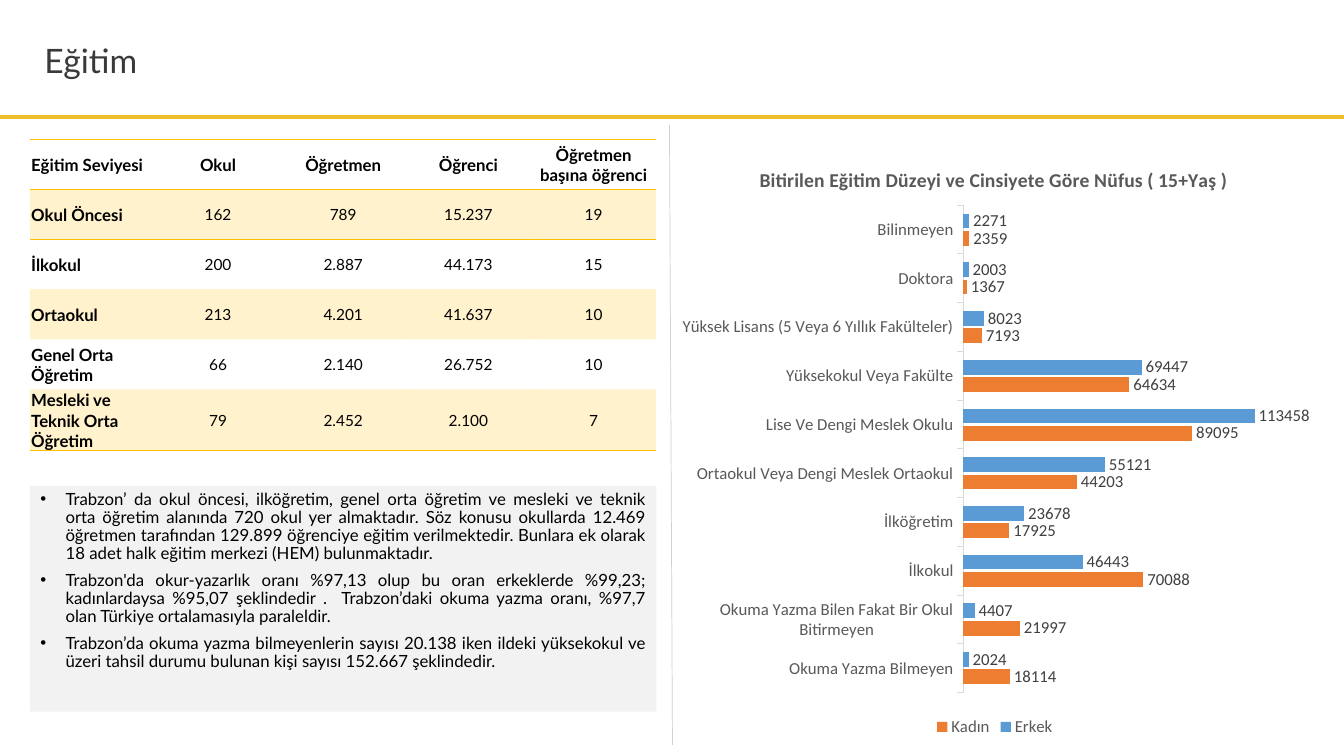
from dataclasses import dataclass

from lxml import etree
from pptx import Presentation
from pptx import util as u
from pptx.chart import data as chart_data
from pptx.dml import color
from pptx.enum import chart as ch
from pptx.enum import shapes, text
from pptx.oxml import ns, parse_xml


@dataclass(frozen=True)
class Theme:
    ink: str = "000000"
    heading: str = "3B3A39"
    gold: str = "EEBF2B"
    amber: str = "FFC000"
    divider: str = "D0CECE"
    panel: str = "F2F2F2"
    axis: str = "D9D9D9"
    muted: str = "595959"
    value: str = "404040"
    male: str = "5B9BD5"
    female: str = "ED7D31"
    text_font: str = "Lato"
    chart_font: str = "Calibri"
    title_size: int = 24
    chart_title_size: int = 14
    body_size: int = 12
    cell_size: int = 11


theme = Theme()


def style(font, face, size, hex_color, bold=False):
    font.name = face
    font.size = u.Pt(size)
    font.bold = bold
    font.color.rgb = color.RGBColor.from_string(hex_color)


def manual_layout(**parts):
    inner = '<c:layoutTarget val="inner"/>' if "w" in parts else ""
    modes = "".join(f'<c:{key}Mode val="edge"/>' for key in "xy")
    values = "".join(f'<c:{key} val="{value}"/>' for key, value in parts.items())
    return parse_xml(
        f'<c:layout {ns.nsdecls("c")}><c:manualLayout>{inner}{modes}{values}'
        "</c:manualLayout></c:layout>"
    )


deck = Presentation()
deck.slide_width = u.Inches(13.33)
deck.slide_height = u.Inches(7.5)
slide = deck.slides.add_slide(deck.slide_layouts[1])

rules = [
    (0, 1.16, 13.33, 1.16, theme.gold, 3),
    (6.64, 1.24, 6.67, 7.39, theme.divider, 0.5),
]
for x1, y1, x2, y2, hex_color, width in rules:
    rule = slide.shapes.add_connector(
        shapes.MSO_CONNECTOR.STRAIGHT, *map(u.Inches, (x1, y1, x2, y2))
    )
    rule.line.color.rgb = color.RGBColor.from_string(hex_color)
    rule.line.width = u.Pt(width)
    etree.SubElement(rule._element.spPr, ns.qn("a:effectLst"))

heading = slide.shapes.title
heading.left, heading.top, heading.width, heading.height = map(
    u.Inches, (0.34, 0.2, 12.65, 0.85)
)
heading.text_frame.vertical_anchor = text.MSO_ANCHOR.MIDDLE
heading.text_frame.auto_size = text.MSO_AUTO_SIZE.NONE
heading_line = heading.text_frame.paragraphs[0]
heading_line.alignment = text.PP_ALIGN.LEFT
heading_line.line_spacing = 0.9
heading_run = heading_line.add_run()
heading_run.text = "Eğitim"
style(heading_run.font, theme.text_font, theme.title_size, theme.heading)

findings = [
    "Trabzon’ da okul öncesi, ilköğretim, genel orta öğretim ve mesleki ve teknik orta öğretim alanında 720 okul yer almaktadır. Söz konusu okullarda 12.469 öğretmen tarafından 129.899 öğrenciye eğitim verilmektedir. Bunlara ek olarak 18 adet halk eğitim merkezi (HEM) bulunmaktadır.",
    "Trabzon'da okur-yazarlık oranı %97,13 olup bu oran erkeklerde %99,23; kadınlardaysa %95,07 şeklindedir .  Trabzon’daki okuma yazma oranı, %97,7 olan Türkiye ortalamasıyla paraleldir.",
    "Trabzon’da okuma yazma bilmeyenlerin sayısı 20.138 iken ildeki yüksekokul ve üzeri tahsil durumu bulunan kişi sayısı 152.667 şeklindedir.",
]
summary = slide.placeholders[1]
summary.left, summary.top, summary.width, summary.height = map(
    u.Inches, (0.3, 4.82, 6.21, 2.24)
)
summary.fill.solid()
summary.fill.fore_color.rgb = color.RGBColor.from_string(theme.panel)
summary.text_frame.auto_size = text.MSO_AUTO_SIZE.NONE
for index, finding in enumerate(findings):
    frame = summary.text_frame
    point = frame.add_paragraph() if index else frame.paragraphs[0]
    props = point._p.get_or_add_pPr()
    props.set("marL", str(u.Inches(0.25)))
    props.set("indent", str(u.Inches(-0.25)))
    etree.SubElement(props, ns.qn("a:buFont"), typeface="Arial")
    etree.SubElement(props, ns.qn("a:buChar"), char="•")
    point.alignment = text.PP_ALIGN.JUSTIFY
    point.line_spacing = 0.9
    point.space_before = u.Pt(6 if index else 0)
    run = point.add_run()
    run.text = finding
    style(run.font, theme.text_font, theme.body_size, theme.ink)

school_rows = [
    ["Eğitim Seviyesi", "Okul", "Öğretmen", "Öğrenci", "Öğretmen başına öğrenci"],
    ["Okul Öncesi", "162", "789", "15.237", "19"],
    ["İlkokul", "200", "2.887", "44.173", "15"],
    ["Ortaokul", "213", "4.201", "41.637", "10"],
    ["Genel Orta Öğretim", "66", "2.140", "26.752", "10"],
    ["Mesleki ve Teknik Orta Öğretim", "79", "2.452", "2.100", "7"],
]
last_row = len(school_rows) - 1
schools_frame = slide.shapes.add_table(
    len(school_rows), 5, *map(u.Inches, (0.3, 1.38, 6.21, 2.98))
)
schools = schools_frame.table
schools.horz_banding = False
schools.first_row = False
schools._tbl.tblPr.find(ns.qn("a:tableStyleId")).text = (
    "{2D5ABB26-0587-4C30-8999-92F81FD0307C}"
)
for r, values in enumerate(school_rows):
    for c, value in enumerate(values):
        cell = schools.cell(r, c)
        cell.vertical_anchor = text.MSO_ANCHOR.MIDDLE
        cell.margin_left = cell.margin_right = cell.margin_top = u.Inches(0.01)
        cell.margin_bottom = 0
        entry = cell.text_frame.paragraphs[0]
        entry.alignment = text.PP_ALIGN.CENTER if c else text.PP_ALIGN.LEFT
        run = entry.add_run()
        run.text = value
        label = r == 0 or c == 0
        size = theme.body_size if label else theme.cell_size
        style(run.font, theme.text_font, size, theme.ink, label)

        props = cell._tc.get_or_add_tcPr()
        if r % 2:
            cell.fill.solid()
            cell.fill.fore_color.rgb = color.RGBColor.from_string(theme.amber)
            tint = props.find(".//" + ns.qn("a:srgbClr"))
            etree.SubElement(tint, ns.qn("a:alpha"), val="20000")
        else:
            cell.fill.background()
        edges = {0: ["lnT", "lnB"], 1: ["lnT"], last_row: ["lnB"]}.get(r, [])
        for position, edge in enumerate(edges):
            border = parse_xml(
                f'<a:{edge} {ns.nsdecls("a")} w="{u.Pt(1)}"><a:solidFill>'
                f'<a:srgbClr val="{theme.amber}"/></a:solidFill></a:{edge}>'
            )
            props.insert(position, border)

population = chart_data.CategoryChartData()
population.categories = [
    "Bilinmeyen",
    "Doktora",
    "Yüksek Lisans (5 Veya 6 Yıllık Fakülteler)",
    "Yüksekokul Veya Fakülte",
    "Lise Ve Dengi Meslek Okulu",
    "Ortaokul Veya Dengi Meslek Ortaokul",
    "İlköğretim",
    "İlkokul",
    "Okuma Yazma Bilen Fakat Bir Okul Bitirmeyen",
    "Okuma Yazma Bilmeyen",
]
population.add_series(
    "Erkek", [2271, 2003, 8023, 69447, 113458, 55121, 23678, 46443, 4407, 2024]
)
population.add_series(
    "Kadın", [2359, 1367, 7193, 64634, 89095, 44203, 17925, 70088, 21997, 18114]
)
chart = slide.shapes.add_chart(
    ch.XL_CHART_TYPE.BAR_CLUSTERED, *map(u.Inches, (6.75, 1.38, 6.24, 5.97)), population
).chart
style(chart.font, theme.chart_font, theme.body_size, theme.muted)

chart.has_title = True
caption = chart.chart_title.text_frame.paragraphs[0].add_run()
caption.text = "Bitirilen Eğitim Düzeyi ve Cinsiyete Göre Nüfus ( 15+Yaş )"
style(caption.font, theme.chart_font, theme.chart_title_size, theme.muted, True)
plot_area = chart._chartSpace.chart.plotArea
for parent in (chart.chart_title._element, plot_area):
    for unset in parent.findall(ns.qn("c:layout")):
        parent.remove(unset)
chart.chart_title._element.find(ns.qn("c:tx")).addnext(manual_layout(x=0.12, y=0.04))
plot_area.insert(0, manual_layout(x=0.45, y=0.11, w=0.49, h=0.81))

chart.has_legend = True
chart.legend.position = ch.XL_LEGEND_POSITION.BOTTOM
chart.legend.include_in_layout = False
style(chart.legend.font, theme.chart_font, theme.body_size, theme.muted)

levels = chart.category_axis
levels.reverse_order = True
levels.has_major_gridlines = False
levels.major_tick_mark = ch.XL_TICK_MARK.OUTSIDE
levels.format.line.color.rgb = color.RGBColor.from_string(theme.axis)
levels.format.line.width = u.Pt(0.75)
style(levels.tick_labels.font, theme.chart_font, theme.body_size, theme.muted)
chart.value_axis.visible = False
chart.value_axis.has_major_gridlines = False
chart.value_axis.minimum_scale = 0
chart.value_axis.maximum_scale = 120000

bars = chart.plots[0]
bars.gap_width = 113
bars.overlap = -17
bars.vary_by_categories = False
for series, hex_color in zip(bars.series, (theme.male, theme.female)):
    series.format.fill.solid()
    series.format.fill.fore_color.rgb = color.RGBColor.from_string(hex_color)
    series.data_labels.show_value = True
    series.data_labels.position = ch.XL_LABEL_POSITION.OUTSIDE_END
    style(series.data_labels.font, theme.chart_font, theme.body_size, theme.value)

deck.save("out.pptx")
